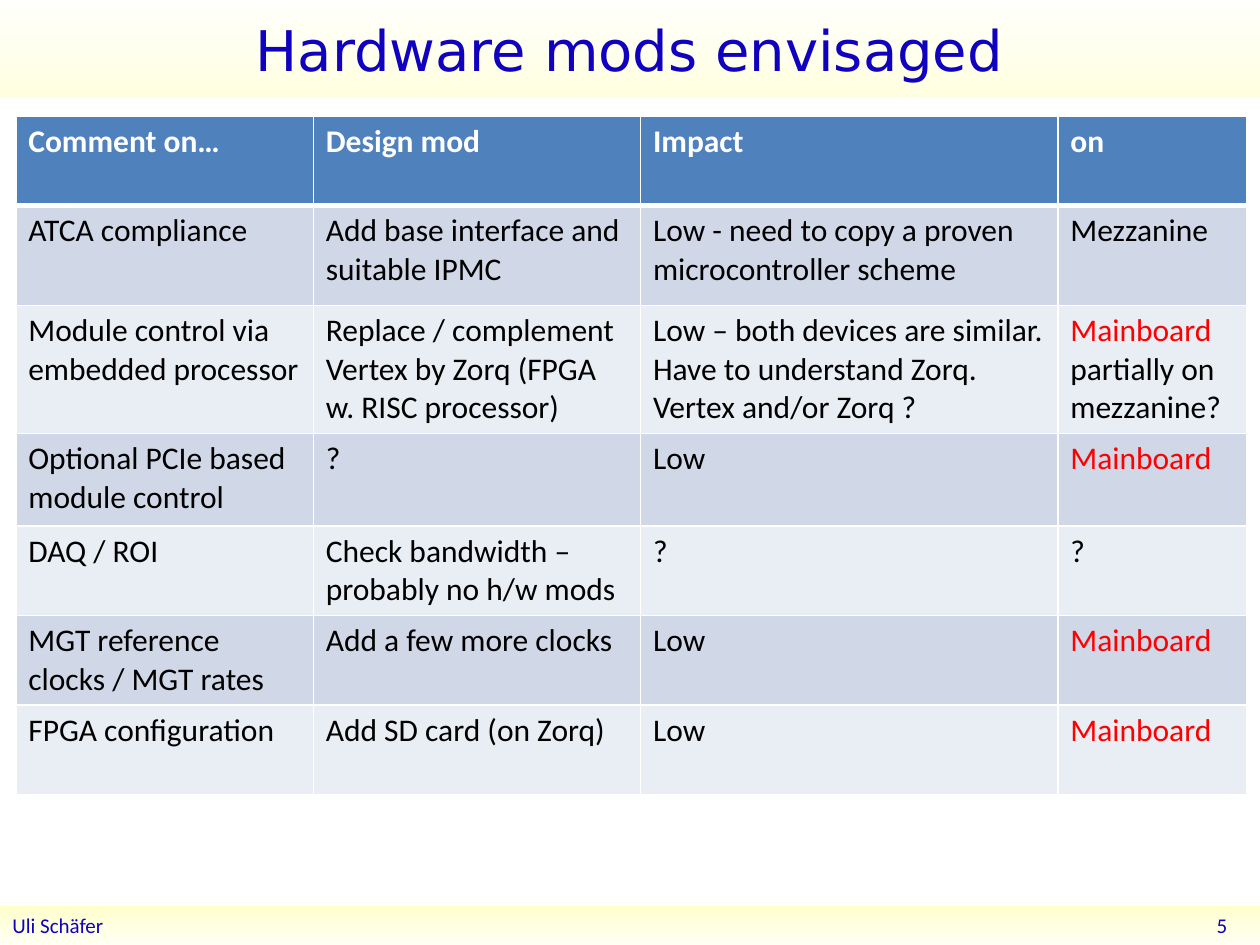
from lxml import etree
from pptx import Presentation
from pptx import util as u
from pptx.dml import color
from pptx.enum import shapes, text
from pptx.oxml import ns

BLUE, WHITE, BLACK, RED = "0F01BF", "FFFFFF", "000000", "FF0000"
HEADER_FILL, BAND_FILLS = "4F81BD", ("E9EDF4", "D0D8E8")
COLUMN_WIDTHS = (170, 187, 238.5, 108)
ROW_HEIGHTS = (51, 57, 68, 53, 51, 51, 51)
ROWS = (
    ("Comment on…", "Design mod", "Impact", "on"),
    ("ATCA compliance", "Add base interface and suitable IPMC",
     "Low - need to copy a proven microcontroller scheme", "Mezzanine"),
    ("Module control via embedded processor",
     "Replace / complement Vertex by Zorq (FPGA w. RISC processor)",
     "Low – both devices are similar. Have to understand Zorq. \nVertex and/or Zorq ?",
     "Mainboard\npartially on mezzanine?"),
    ("Optional PCIe based module control", "?", "Low", "Mainboard"),
    ("DAQ / ROI", "Check bandwidth – probably no h/w mods", "?", "?"),
    ("MGT reference clocks / MGT rates", "Add a few more clocks", "Low", "Mainboard"),
    ("FPGA configuration", "Add SD card (on Zorq)", "Low", "Mainboard"),
)


def rgb(value):
    return color.RGBColor.from_string(value)


def place(shape, left, top, width, height):
    shape.left, shape.top = u.Pt(left), u.Pt(top)
    shape.width, shape.height = u.Pt(width), u.Pt(height)


def fill_downwards(shape, top_color, bottom_color):
    shape.fill.gradient()
    shape.fill.gradient_angle = 270
    for stop, value in zip(shape.fill.gradient_stops, (top_color, bottom_color)):
        stop.color.rgb = rgb(value)


def write_line(shape, words, size, font_name, alignment):
    frame = shape.text_frame
    frame.text = words
    frame.word_wrap = True
    frame.auto_size = text.MSO_AUTO_SIZE.NONE
    frame.vertical_anchor = text.MSO_ANCHOR.MIDDLE
    paragraph = frame.paragraphs[0]
    paragraph.alignment = alignment
    paragraph.font.size = u.Pt(size)
    paragraph.font.name = font_name
    paragraph.font.color.rgb = rgb(BLUE)


def add_title(slide):
    title = slide.shapes.title
    place(title, 0, 0, 720, 56)
    fill_downwards(title, "FFFFFC", "FFFFE0")
    write_line(title, "Hardware mods envisaged", 32, "DejaVu Sans", text.PP_ALIGN.CENTER)


def add_footer(slide):
    bar = slide.shapes.add_shape(
        shapes.MSO_SHAPE.RECTANGLE, 0, u.Pt(517.5), u.Pt(720), u.Pt(22.5))
    bar.shadow.inherit = False
    bar.line.fill.background()
    fill_downwards(bar, "FFFFCC", "FFFFF4")
    write_line(bar, "Uli Schäfer", 12, "Calibri", text.PP_ALIGN.LEFT)
    number = slide.shapes.add_textbox(u.Pt(556.5), u.Pt(517), u.Pt(152), u.Pt(23))
    write_line(number, "5", 12, "Calibri", text.PP_ALIGN.RIGHT)


def set_borders(cell, widths):
    properties = cell._tc.get_or_add_tcPr()
    for side, width in widths.items():
        line = etree.SubElement(properties, ns.qn(f"a:ln{side}"), w=str(u.Pt(width)))
        fill = etree.SubElement(line, ns.qn("a:solidFill"))
        etree.SubElement(fill, ns.qn("a:srgbClr"), val=WHITE)


def write_cell(cell, words, is_header):
    paragraph = cell.text_frame.paragraphs[0]
    paragraph.font.size = u.Pt(18)
    paragraph.font.name = "Calibri"
    for index, line in enumerate(words.split("\n")):
        if index:
            paragraph.add_line_break()
        run = paragraph.add_run()
        run.text = line
        run.font.bold = is_header
        body_color = RED if line == "Mainboard" else BLACK
        run.font.color.rgb = rgb(WHITE if is_header else body_color)


def add_mods_table(slide):
    table = slide.shapes.add_table(
        len(ROWS), len(COLUMN_WIDTHS), u.Pt(9), u.Pt(66.5),
        u.Pt(sum(COLUMN_WIDTHS)), u.Pt(sum(ROW_HEIGHTS))).table
    for column, width in zip(table.columns, COLUMN_WIDTHS):
        column.width = u.Pt(width)
    for row_index, (row, height, entries) in enumerate(zip(table.rows, ROW_HEIGHTS, ROWS)):
        row.height = u.Pt(height)
        is_header = row_index == 0
        top, bottom = {0: (1, 3), 1: (3, 1)}.get(row_index, (1, 1))
        for cell, words in zip(row.cells, entries):
            set_borders(cell, {"L": 1, "R": 1, "T": top, "B": bottom})
            cell.fill.solid()
            cell.fill.fore_color.rgb = rgb(
                HEADER_FILL if is_header else BAND_FILLS[row_index % 2])
            write_cell(cell, words, is_header)


def main():
    presentation = Presentation()
    presentation.slide_width, presentation.slide_height = u.Pt(720), u.Pt(540)
    slide = presentation.slides.add_slide(presentation.slide_layouts[5])
    add_title(slide)
    add_footer(slide)
    add_mods_table(slide)
    presentation.save("out.pptx")


if __name__ == "__main__":
    main()
